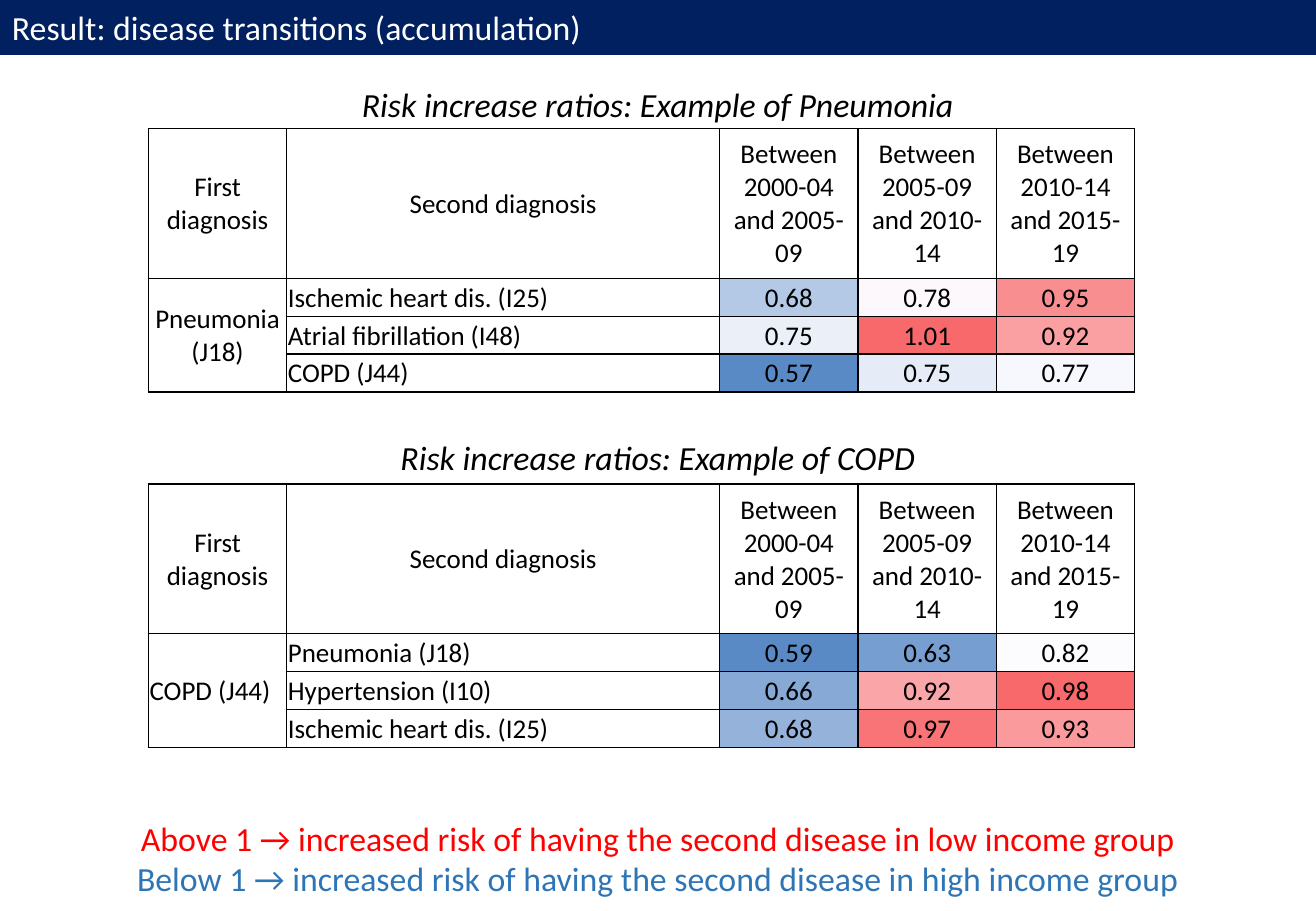
from lxml import etree
from pptx import Presentation
from pptx.dml.color import RGBColor
from pptx.enum.shapes import MSO_SHAPE
from pptx.enum.text import MSO_ANCHOR as ANCHOR, PP_ALIGN as ALIGN
from pptx.oxml.ns import qn
from pptx.util import Pt

# Content
FONT = "Calibri"
TITLE = "Result: disease transitions (accumulation)"
HEADER = ["First diagnosis", "Second diagnosis", "Between 2000-04 and 2005-09",
          "Between 2005-09 and 2010-14", "Between 2010-14 and 2015-19"]
# caption, caption top, table top, first diagnosis, its alignment, rows
TABLES = [
    ("Risk increase ratios: Example of Pneumonia", 46, 76.2,
     "Pneumonia (J18)", ALIGN.CENTER, [
         ("Ischemic heart dis. (I25)",
          [("0.68", "B4C9E5"), ("0.78", "FCF8FB"), ("0.95", "F98E90")]),
         ("Atrial fibrillation (I48)",
          [("0.75", "EAEFF8"), ("1.01", "F8696B"), ("0.92", "FAA0A2")]),
         ("COPD (J44)",
          [("0.57", "5A8AC6"), ("0.75", "E6ECF7"), ("0.77", "F6F8FD")]),
     ]),
    ("Risk increase ratios: Example of COPD", 255.2, 286.8,
     "COPD (J44)", ALIGN.LEFT, [
         ("Pneumonia (J18)",
          [("0.59", "5A8AC6"), ("0.63", "769ED0"), ("0.82", "FCFCFF")]),
         ("Hypertension (I10)",
          [("0.66", "86A9D5"), ("0.92", "FAA5A7"), ("0.98", "F8696B")]),
         ("Ischemic heart dis. (I25)",
          [("0.68", "95B3DA"), ("0.97", "F97476"), ("0.93", "FA9A9D")]),
     ]),
]
LEGEND = [
    ("Above 1 → increased risk of having the second disease in low income group", "FF0000"),
    ("Below 1 → increased risk of having the second disease in high income group", "2E75B6"),
]

# Layout
SLIDE_W, SLIDE_H = 780, 540
TABLE_LEFT = 88
COL_W = [82, 256.6, 82, 82, 82]
ROW_H = [88.8, 22.5, 22.5, 22.5]


def color(hex_code):
    return RGBColor.from_string(hex_code)


def write(p, text, size, hex_code="000000", align=ALIGN.CENTER, italic=False):
    p.add_run().text = text
    p.alignment = align
    f = p.font
    f.name, f.size, f.italic = FONT, Pt(size), italic
    f.color.rgb = color(hex_code)


def add_lines(s, top, height, lines, italic=False):
    tf = s.shapes.add_textbox(0, Pt(top), Pt(SLIDE_W), Pt(height)).text_frame
    tf.word_wrap = True
    for i, (text, hex_code) in enumerate(lines):
        p = tf.add_paragraph() if i else tf.paragraphs[0]
        write(p, text, 20, hex_code, italic=italic)


def add_borders(cell):
    tc_pr = cell._tc.get_or_add_tcPr()
    for i, side in enumerate(("lnL", "lnR", "lnT", "lnB")):
        ln = etree.Element(qn(f"a:{side}"), w=str(Pt(1)))
        fill = etree.SubElement(ln, qn("a:solidFill"))
        etree.SubElement(fill, qn("a:srgbClr"), val="000000")
        tc_pr.insert(i, ln)


def fill_cell(cell, text, align=ALIGN.CENTER, fill=None):
    cell.vertical_anchor = ANCHOR.MIDDLE
    cell.margin_left = cell.margin_right = cell.margin_top = Pt(0.7)
    cell.margin_bottom = 0
    if fill:
        cell.fill.solid()
        cell.fill.fore_color.rgb = color(fill)
    else:
        cell.fill.background()
    add_borders(cell)
    if text:
        write(cell.text_frame.paragraphs[0], text, 16, align=align)


def add_ratio_table(s, top, first, first_align, rows):
    table = s.shapes.add_table(len(ROW_H), len(COL_W), Pt(TABLE_LEFT), Pt(top),
                               Pt(sum(COL_W)), Pt(sum(ROW_H))).table
    table.first_row = table.horz_banding = False
    for col, w in zip(table.columns, COL_W):
        col.width = Pt(w)
    for row, h in zip(table.rows, ROW_H):
        row.height = Pt(h)
    for c, text in enumerate(HEADER):
        fill_cell(table.cell(0, c), text)
    for r, (second, ratios) in enumerate(rows, 1):
        fill_cell(table.cell(r, 0), first if r == 1 else "", first_align)
        fill_cell(table.cell(r, 1), second, ALIGN.LEFT)
        for c, (ratio, fill) in enumerate(ratios, 2):
            fill_cell(table.cell(r, c), ratio, fill=fill)
    table.cell(1, 0).merge(table.cell(len(rows), 0))


prs = Presentation()
prs.slide_width, prs.slide_height = Pt(SLIDE_W), Pt(SLIDE_H)
s = prs.slides.add_slide(prs.slide_layouts[6])

# Title bar
bar = s.shapes.add_shape(MSO_SHAPE.RECTANGLE, 0, 0, Pt(SLIDE_W), Pt(31.5))
bar.shadow.inherit = False
bar.fill.solid()
bar.fill.fore_color.rgb = bar.line.color.rgb = color("002060")
bar.line.width = Pt(2.25)
write(bar.text_frame.paragraphs[0], TITLE, 20, "FFFFFF", ALIGN.LEFT)

# Captions and tables
for caption, caption_top, table_top, first, first_align, rows in TABLES:
    add_lines(s, caption_top, 31.5, [(caption, "000000")], italic=True)
    add_ratio_table(s, table_top, first, first_align, rows)

# Legend
add_lines(s, 481, 55.5, LEGEND)

prs.save("out.pptx")
